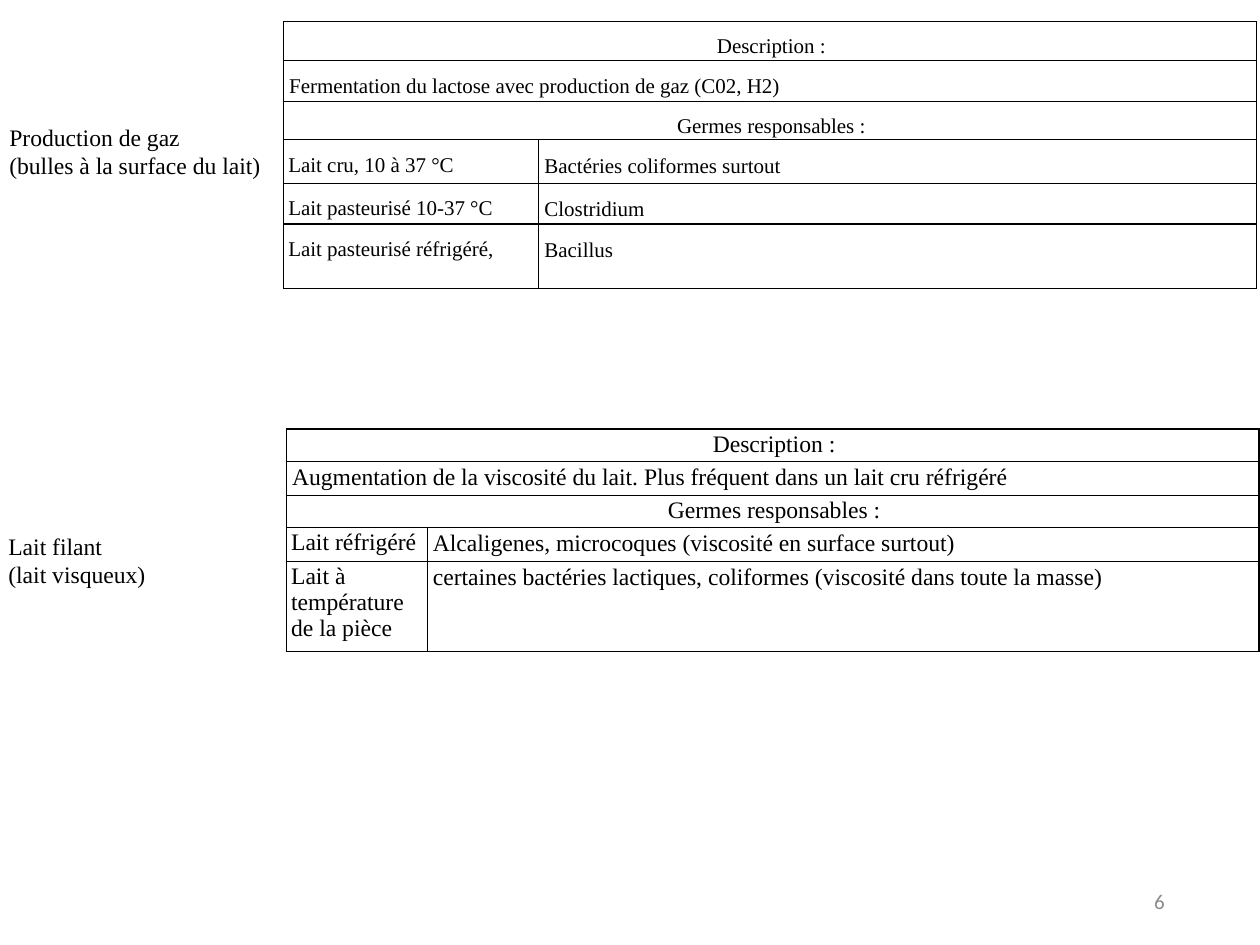
"""Build a slide of two tables on milk defects and the germs behind them."""
from lxml import etree
from pptx import Presentation
from pptx.dml.color import RGBColor
from pptx.enum.text import MSO_ANCHOR, PP_ALIGN
from pptx.oxml.ns import qn
from pptx.util import Inches, Pt

LEFT, CENTER, RIGHT = PP_ALIGN.LEFT, PP_ALIGN.CENTER, PP_ALIGN.RIGHT
MIDDLE = MSO_ANCHOR.MIDDLE
COLORS = {"ink": "000000", "number": "8C8C8C"}
WIDTH, HEIGHT = 13.33, 10
LABEL_WIDTH, TABLE_WIDTH = 3, 10.29


def write(frame, text, size=18, font="Times New Roman", color="ink",
          align=LEFT, spacing=None, indent=0, after=None):
    paragraph = frame.paragraphs[0]
    paragraph.text = text
    paragraph.alignment = align
    if spacing:
        paragraph.line_spacing = spacing
    if after:
        paragraph.space_after = Pt(after)
    if indent:
        properties = paragraph._p.get_or_add_pPr()
        properties.set("marL", str(Inches(indent)))
        properties.set("indent", "0")
    for run in paragraph.runs:
        run.font.size = Pt(size)
        run.font.name = font
        run.font.color.rgb = RGBColor.from_string(COLORS[color])


def border(cell):
    properties = cell._tc.get_or_add_tcPr()
    for side in ("a:lnL", "a:lnR", "a:lnT", "a:lnB"):
        line = etree.SubElement(properties, qn(side), w=str(Pt(1)))
        fill = etree.SubElement(line, qn("a:solidFill"))
        etree.SubElement(fill, qn("a:srgbClr"), val=COLORS["ink"])
    cell.fill.background()


defects = [
    {
        "label": "Production de gaz\n(bulles à la surface du lait)",
        "label_at": (0, 1.25), "table_at": (3, 0.23),
        "first_column": 2.7, "heights": [0.4, 0.43, 0.41, 0.46, 0.43, 0.68],
        "size": 16, "spacing": 1.5,
        "description": "Fermentation du lactose avec production de gaz (C02, H2)",
        "germs": [
            ("Lait cru, 10 à 37 °C", "Bactéries coliformes surtout"),
            ("Lait pasteurisé 10-37 °C", "Clostridium"),
            ("Lait pasteurisé réfrigéré,", "Bacillus"),
        ],
    },
    {
        "label": "Lait filant\n(lait visqueux)",
        "label_at": (-0.01, 5.58), "table_at": (3.03, 4.54),
        "first_column": 1.49, "heights": [0.34, 0.36, 0.34, 0.36, 0.95],
        "size": 18, "spacing": None,
        "description": "Augmentation de la viscosité du lait. Plus fréquent dans un lait cru réfrigéré",
        "germs": [
            ("Lait réfrigéré", "Alcaligenes, microcoques (viscosité en surface surtout)"),
            ("Lait à température de la pièce",
             "certaines bactéries lactiques, coliformes (viscosité dans toute la masse)"),
        ],
    },
]

deck = Presentation()
deck.slide_width, deck.slide_height = Inches(WIDTH), Inches(HEIGHT)
slide = deck.slides.add_slide(deck.slide_layouts[6])

for defect in defects:
    rows = [("Description :",), (defect["description"],), ("Germes responsables :",), *defect["germs"]]
    left, top = defect["table_at"]
    table = slide.shapes.add_table(
        len(rows), 2, Inches(left), Inches(top),
        Inches(TABLE_WIDTH), Inches(sum(defect["heights"]))).table
    table.first_row = table.horz_banding = False
    table.columns[0].width = Inches(defect["first_column"])
    table.columns[1].width = Inches(TABLE_WIDTH - defect["first_column"])

    for index, (texts, height) in enumerate(zip(rows, defect["heights"])):
        table.rows[index].height = Inches(height)
        for column in range(2):
            border(table.cell(index, column))
        if len(texts) == 1:
            table.cell(index, 0).merge(table.cell(index, 1))
        for column, text in enumerate(texts):
            cell = table.cell(index, column)
            heading = index in (0, 2)
            detail = index == 1 or column == 1
            edge = 0.03 if detail else 0.02
            cell.margin_left = Inches(0.03 if detail else 0.05)
            cell.margin_top = cell.margin_right = cell.margin_bottom = Inches(edge)
            write(cell.text_frame, text, size=defect["size"], spacing=defect["spacing"],
                  align=CENTER if heading else LEFT,
                  indent=0.03 if detail else 0, after=2.2 if detail else None)

    left, top = defect["label_at"]
    label = slide.shapes.add_textbox(Inches(left), Inches(top), Inches(LABEL_WIDTH), Inches(0.71))
    label.text_frame.word_wrap = True
    write(label.text_frame, defect["label"])

number = slide.shapes.add_textbox(Inches(9.42), Inches(9.27), Inches(3), Inches(0.53))
number.text_frame.word_wrap = True
number.text_frame.vertical_anchor = MIDDLE
write(number.text_frame, "6", size=16, font="Calibri", color="number", align=RIGHT)

deck.save("out.pptx")
